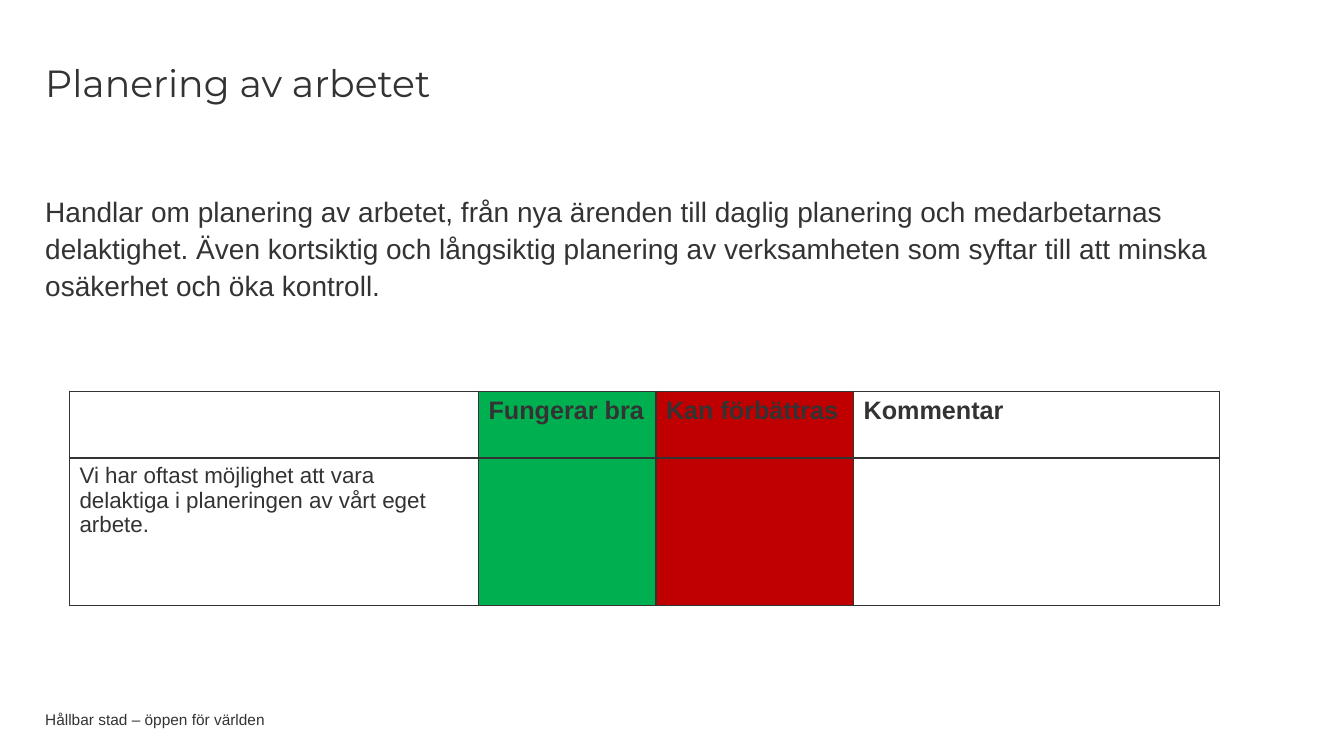
from lxml import etree
from pptx import Presentation
from pptx import util as u
from pptx.dml import color
from pptx.enum import text
from pptx.oxml import ns

COLORS = {"ink": "333333", "good": "00B050", "improve": "C00000"}
COLUMNS = [
    (10.31, None, "", "Vi har oftast möjlighet att vara delaktiga i planeringen av vårt eget arbete."),
    (4.47, "good", "Fungerar bra", ""),
    (4.98, "improve", "Kan förbättras", ""),
    (9.22, None, "Kommentar", ""),
]
ROWS = [(1.68, {"size": u.Pt(18), "bold": True}), (3.71, {"size": u.Pt(16), "bold": False})]


def rgb(name):
    return color.RGBColor.from_string(COLORS[name])


def apply(target, formats):
    for name, value in formats.items():
        setattr(target, name, value)


def write(paragraph, wording, font):
    run = paragraph.add_run()
    run.text = wording
    apply(run.font, {"name": "Arial", **font})
    run.font.color.rgb = rgb("ink")


def add_text(slide, box, wording, font, frame=None, spacing=None):
    shape = slide.shapes.add_textbox(*map(u.Cm, box))
    margins = dict.fromkeys(("margin_left", "margin_right", "margin_top", "margin_bottom"), 0)
    apply(shape.text_frame, {"word_wrap": True, **margins, **(frame or {})})
    paragraph = shape.text_frame.paragraphs[0]
    apply(paragraph, spacing or {})
    write(paragraph, wording, font)


def add_borders(cell):
    properties = cell._tc.get_or_add_tcPr()
    for position, side in enumerate(("lnL", "lnR", "lnT", "lnB")):
        line = etree.Element(ns.qn(f"a:{side}"), w=str(u.Pt(1)))
        fill = etree.SubElement(line, ns.qn("a:solidFill"))
        etree.SubElement(fill, ns.qn("a:srgbClr"), val=COLORS["ink"])
        properties.insert(position, line)


def fill_cell(cell, fill, wording, font):
    if fill:
        cell.fill.solid()
        cell.fill.fore_color.rgb = rgb(fill)
    else:
        cell.fill.background()
    add_borders(cell)
    if wording:
        write(cell.text_frame.paragraphs[0], wording, font)


def add_assessment_table(slide, left, top):
    width = sum(column[0] for column in COLUMNS)
    height = sum(row[0] for row in ROWS)
    table = slide.shapes.add_table(
        len(ROWS), len(COLUMNS), u.Cm(left), u.Cm(top), u.Cm(width), u.Cm(height)
    ).table
    apply(table, {"first_row": False, "horz_banding": False})
    for row_index, (row_height, font) in enumerate(ROWS):
        table.rows[row_index].height = u.Cm(row_height)
        for column_index, (column_width, fill, *wordings) in enumerate(COLUMNS):
            table.columns[column_index].width = u.Cm(column_width)
            fill_cell(table.cell(row_index, column_index), fill, wordings[row_index], font)


def main():
    presentation = Presentation()
    apply(presentation, {"slide_width": u.Cm(33.87), "slide_height": u.Cm(19.05)})
    slide = presentation.slides.add_slide(presentation.slide_layouts[6])
    middle = {"vertical_anchor": text.MSO_ANCHOR.MIDDLE}
    add_text(slide, (1.14, 17.93, 24, 0.41), "Hållbar stad – öppen för världen",
             {"size": u.Pt(11)}, middle)
    add_text(slide, (1.14, 1.12, 25.48, 2.06), "Planering av arbetet",
             {"name": "Montserrat", "size": u.Pt(27)}, middle, {"line_spacing": 0.9})
    add_text(slide, (1.14, 4.83, 30.63, 11.61),
             "Handlar om planering av arbetet, från nya ärenden till daglig planering och "
             "medarbetarnas delaktighet. Även kortsiktig och långsiktig planering av "
             "verksamheten som syftar till att minska osäkerhet och öka kontroll.",
             {"size": u.Pt(20)}, spacing={"line_spacing": 1.1, "space_after": u.Pt(3)})
    add_assessment_table(slide, 1.75, 9.86)
    presentation.save("out.pptx")


if __name__ == "__main__":
    main()
